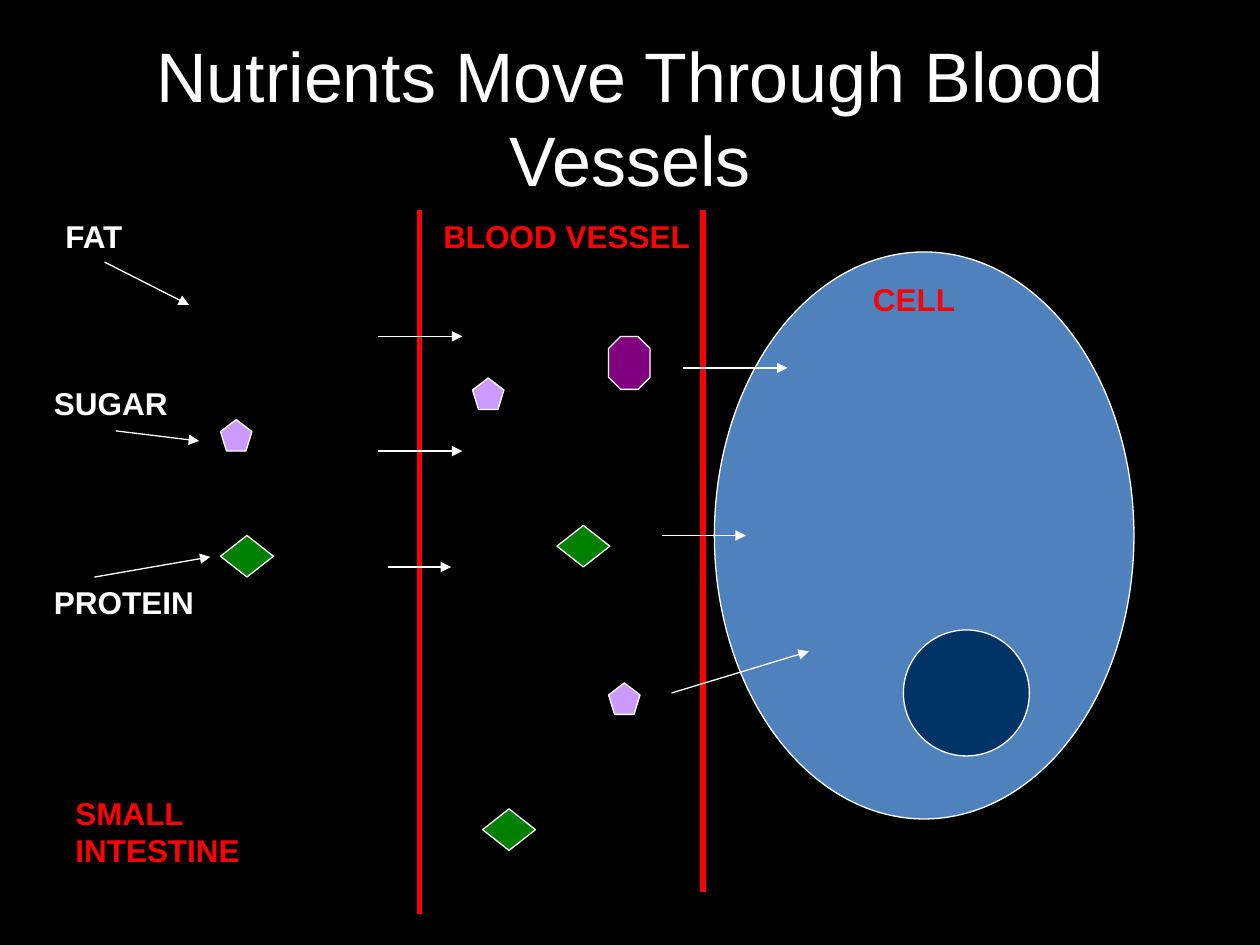
"""Builds the slide on nutrients moving through blood vessels into a cell."""
from dataclasses import dataclass

import lxml.etree
import pptx
import pptx.dml.color
import pptx.enum.shapes
import pptx.enum.text
import pptx.oxml.ns
import pptx.util

Inches = pptx.util.Inches
SHAPES = pptx.enum.shapes.MSO_SHAPE
ANCHOR = pptx.enum.text.MSO_ANCHOR
ALIGN = pptx.enum.text.PP_ALIGN
FIT = pptx.enum.text.MSO_AUTO_SIZE


@dataclass(frozen=True)
class Theme:
    background: str = "000000"
    white: str = "FFFFFF"
    red: str = "FF0000"
    cell: str = "4F81BD"
    nucleus: str = "003366"
    sugar: str = "CC99FF"
    protein: str = "008000"
    fat: str = "800080"
    font: str = "Arial"
    title_size: int = 40
    label_size: int = 18
    outline: float = 0.75
    wall: float = 3


def color(value):
    return pptx.dml.color.RGBColor.from_string(value)


def apply(target, values):
    for name, value in values.items():
        setattr(target, name, value)


class SlideBuilder:
    def __init__(self, slide, theme):
        self.slide = slide
        self.theme = theme
        fill = slide.background.fill
        fill.solid()
        fill.fore_color.rgb = color(theme.background)

    def text(self, words, box, tint, size, bold=True, frame_format=None, align=ALIGN.LEFT):
        shape = self.slide.shapes.add_textbox(*map(Inches, box))
        frame = shape.text_frame
        apply(frame, {"word_wrap": True, "auto_size": FIT.SHAPE_TO_FIT_TEXT, **(frame_format or {})})
        paragraph = frame.paragraphs[0]
        paragraph.alignment = align
        run = paragraph.add_run()
        run.text = words
        apply(run.font, {"name": self.theme.font, "size": pptx.util.Pt(size), "bold": bold})
        run.font.color.rgb = color(tint)

    def title(self, words, box):
        self.text(words, box, self.theme.white, self.theme.title_size, False,
                  {"auto_size": FIT.NONE, "vertical_anchor": ANCHOR.MIDDLE}, ALIGN.CENTER)

    def nutrient_label(self, words, box):
        self.text(words, box, self.theme.white, self.theme.label_size,
                  frame_format={"word_wrap": False})

    def region_label(self, words, box):
        self.text(words, box, self.theme.red, self.theme.label_size)

    def shape(self, kind, box, tint):
        shape = self.slide.shapes.add_shape(kind, *map(Inches, box))
        shape.shadow.inherit = False
        shape.fill.solid()
        shape.fill.fore_color.rgb = color(tint)
        shape.line.color.rgb = color(self.theme.white)
        shape.line.width = pptx.util.Pt(self.theme.outline)
        return shape

    def sugar(self, left, top):
        self.shape(SHAPES.REGULAR_PENTAGON, (left, top, 0.25, 0.25), self.theme.sugar)

    def protein(self, left, top):
        self.shape(SHAPES.DIAMOND, (left, top, 0.42, 0.33), self.theme.protein)

    def fat(self, left, top):
        shape = self.shape(SHAPES.OCTAGON, (left, top, 0.33, 0.42), self.theme.fat)
        shape.adjustments[0] = 0.29

    def line(self, ends, tint, width):
        connector = self.slide.shapes.add_connector(
            pptx.enum.shapes.MSO_CONNECTOR.STRAIGHT, *map(Inches, ends))
        connector.line.color.rgb = color(tint)
        connector.line.width = pptx.util.Pt(width)
        properties = connector._element.spPr
        lxml.etree.SubElement(properties, pptx.oxml.ns.qn("a:effectLst"))
        return connector

    def vessel_wall(self, x, bottom):
        self.line((x, 1.67, x, bottom), self.theme.red, self.theme.wall)

    def arrow(self, *ends):
        connector = self.line(ends, self.theme.white, self.theme.outline)
        outline = connector.line._get_or_add_ln()
        lxml.etree.SubElement(outline, pptx.oxml.ns.qn("a:tailEnd"), type="triangle")


def main():
    presentation = pptx.Presentation()
    apply(presentation, {"slide_width": Inches(10), "slide_height": Inches(7.5)})
    theme = Theme()
    builder = SlideBuilder(presentation.slides.add_slide(presentation.slide_layouts[6]), theme)

    builder.shape(SHAPES.OVAL, (5.67, 2, 3.33, 4.5), theme.cell)
    builder.title("Nutrients Move Through Blood Vessels", (0.5, 0.3, 9, 1.25))

    for words, box, ends in (
        ("FAT", (0.42, 1.67, 0.69, 0.4), (0.83, 2.08, 1.5, 2.42)),
        ("SUGAR", (0.33, 3, 1.1, 0.4), (0.92, 3.42, 1.58, 3.5)),
        ("PROTEIN", (0.33, 4.58, 1.31, 0.4), (0.75, 4.58, 1.67, 4.42)),
    ):
        builder.nutrient_label(words, box)
        builder.arrow(*ends)

    for x, bottom in ((3.33, 7.25), (5.58, 7.08)):
        builder.vessel_wall(x, bottom)
    for position in ((1.75, 3.33), (4.83, 5.42), (3.75, 3)):
        builder.sugar(*position)
    for position in ((1.75, 4.25), (4.42, 4.17), (3.83, 6.42)):
        builder.protein(*position)
    builder.shape(SHAPES.OVAL, (7.17, 5, 1, 1), theme.nucleus)

    for ends in (
        (3, 2.67, 3.67, 2.67),
        (3, 3.58, 3.67, 3.58),
        (3.08, 4.5, 3.58, 4.5),
        (5.42, 2.92, 6.25, 2.92),
        (5.25, 4.25, 5.92, 4.25),
        (5.33, 5.5, 6.42, 5.17),
    ):
        builder.arrow(*ends)

    for words, box in (
        ("BLOOD VESSEL", (3.42, 1.67, 2.33, 0.4)),
        ("SMALL INTESTINE", (0.5, 6.25, 2.17, 0.7)),
        ("CELL", (6.83, 2.17, 1.67, 0.4)),
    ):
        builder.region_label(words, box)
    builder.fat(4.83, 2.67)

    presentation.save("out.pptx")


if __name__ == "__main__":
    main()
